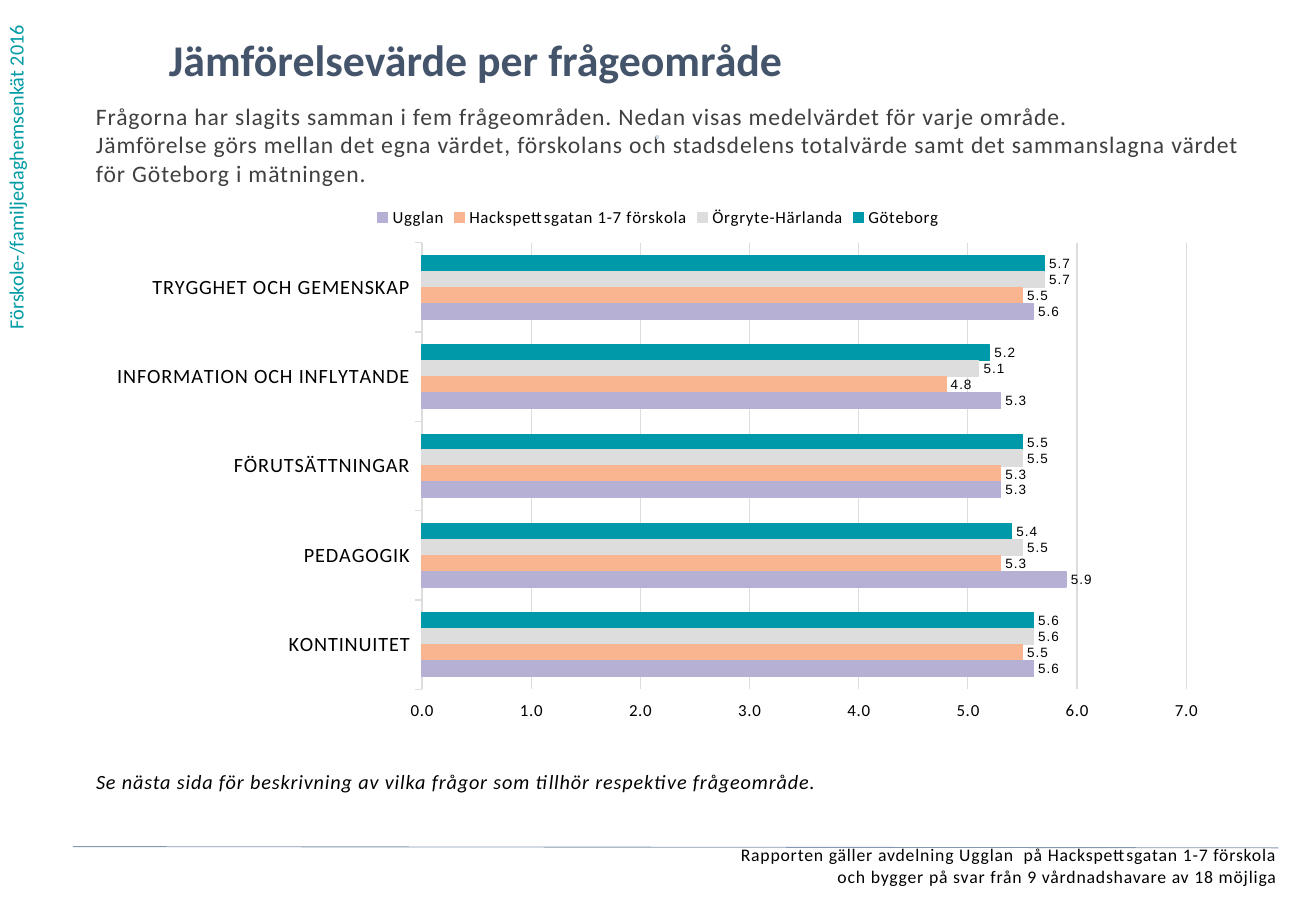
from pptx import Presentation
from pptx import util as u
from pptx.chart.data import CategoryChartData
from pptx.dml.color import RGBColor
from pptx.enum import chart as charts, shapes, text as texts
from pptx.oxml import parse_xml
from pptx.oxml.ns import nsdecls, qn

CATEGORIES = [
    "TRYGGHET OCH GEMENSKAP",
    "INFORMATION OCH INFLYTANDE",
    "FÖRUTSÄTTNINGAR",
    "PEDAGOGIK",
    "KONTINUITET",
]
SERIES = [
    ("Göteborg", "0099AA", [5.7, 5.2, 5.5, 5.4, 5.6]),
    ("Örgryte-Härlanda", "DDDDDD", [5.7, 5.1, 5.5, 5.5, 5.6]),
    ("Hackspettsgatan 1-7 förskola", "F9B590", [5.5, 4.8, 5.3, 5.3, 5.5]),
    ("Ugglan", "B6B1D4", [5.6, 5.3, 5.3, 5.9, 5.6]),
]
PLOT_AREA = {"x": 0.29, "y": 0.09, "w": 0.68, "h": 0.83}


def px(value):
    return u.Emu(value * 9144)


def color(value):
    return RGBColor.from_string(value)


class SlideBuilder:
    font_name = "Calibri"
    label_font = "Arial"
    black = "000000"
    grid = "DDDDDD"
    number_format = "0.0;0.0"
    letter_spacing = "50"

    def __init__(self, slide):
        self.slide = slide

    def style(self, font, size, fill=black, name=font_name, bold=False, italic=False):
        font.size = u.Pt(size)
        font.name = name
        font.bold = bold
        font.italic = italic
        font.color.rgb = color(fill)

    def outline(self, line, fill, width=0.75):
        line.color.rgb = color(fill)
        line.width = u.Pt(width)

    def text(self, content, box, align=texts.PP_ALIGN.LEFT, inset=True, spaced=True,
             vertical=False, **font_format):
        shape = self.slide.shapes.add_textbox(*map(px, box))
        frame = shape.text_frame
        frame.word_wrap = True
        if inset:
            frame.margin_left = frame.margin_right = 0
            frame.margin_top = frame.margin_bottom = 0
        if vertical:
            frame._txBody.bodyPr.set("vert", "vert270")
        frame.text = content
        for paragraph in frame.paragraphs:
            paragraph.alignment = align
            for run in paragraph.runs:
                self.style(run.font, **font_format)
                if spaced:
                    run._r.get_or_add_rPr().set("spc", self.letter_spacing)

    def line(self, start, end, fill, width):
        connector = self.slide.shapes.add_connector(
            shapes.MSO_CONNECTOR.STRAIGHT, *map(px, start + end))
        self.outline(connector.line, fill, width)
        connector._element.spPr.append(parse_xml(f"<a:effectLst {nsdecls('a')}/>"))

    def bar_chart(self, box, categories, series_rows, plot_area):
        data = CategoryChartData(number_format=self.number_format)
        data.categories = categories
        for name, _, values in series_rows:
            data.add_series(name, values)
        chart = self.slide.shapes.add_chart(
            charts.XL_CHART_TYPE.BAR_CLUSTERED, *map(px, box), data).chart
        self.style(chart.font, 10)
        chart.has_title = False
        chart.has_legend = True
        chart.legend.position = charts.XL_LEGEND_POSITION.TOP
        chart.legend.include_in_layout = False
        self.style(chart.legend.font, 10)

        plot = chart.plots[0]
        plot.gap_width = 162
        plot.overlap = 0
        plot.vary_by_categories = False
        for series, (_, fill, _) in zip(plot.series, series_rows):
            self.format_series(series, fill)
        self.format_axes(chart)
        self.place_plot(chart, plot_area)
        for properties in chart.element.iter(qn("a:defRPr")):
            properties.set("spc", self.letter_spacing)

    def format_series(self, series, fill):
        series.invert_if_negative = False
        series.format.fill.solid()
        series.format.fill.fore_color.rgb = color(fill)
        self.outline(series.format.line, fill)
        labels = series.data_labels
        labels.show_value = True
        labels.number_format = self.number_format
        labels.number_format_is_linked = False
        labels.position = charts.XL_LABEL_POSITION.OUTSIDE_END
        self.style(labels.font, 8, name=self.label_font)

    def format_axes(self, chart):
        category_axis = chart.category_axis
        category_axis.reverse_order = True
        category_axis.has_major_gridlines = False
        self.outline(category_axis.format.line, self.grid)
        self.style(category_axis.tick_labels.font, 12)

        value_axis = chart.value_axis
        value_axis.minimum_scale = 0
        value_axis.maximum_scale = 7
        value_axis.major_unit = 1
        value_axis.has_major_gridlines = True
        value_axis.tick_label_position = charts.XL_TICK_LABEL_POSITION.HIGH
        self.outline(value_axis.major_gridlines.format.line, self.grid)
        value_axis.format.line.fill.background()
        value_axis.tick_labels.number_format = self.number_format
        value_axis.tick_labels.number_format_is_linked = False
        self.style(value_axis.tick_labels.font, 10)
        for axis in (category_axis, value_axis):
            axis.major_tick_mark = charts.XL_TICK_MARK.OUTSIDE

    def place_plot(self, chart, plot_area):
        area = chart.element.find(".//" + qn("c:plotArea"))
        for layout in area.findall(qn("c:layout")):
            area.remove(layout)
        modes = "".join(f'<c:{side}Mode val="edge"/>' for side in "xy")
        sizes = "".join(f'<c:{key} val="{value}"/>' for key, value in plot_area.items())
        area.insert(0, parse_xml(
            f"<c:layout {nsdecls('c')}><c:manualLayout>"
            f'<c:layoutTarget val="inner"/>{modes}{sizes}'
            "</c:manualLayout></c:layout>"))


def main():
    presentation = Presentation()
    presentation.slide_width = px(1083)
    presentation.slide_height = px(750)
    builder = SlideBuilder(presentation.slides.add_slide(presentation.slide_layouts[6]))

    builder.text("Förskole-/familjedaghemsenkät 2016", (-2, 0, 40, 281),
                 inset=False, spaced=False, vertical=True, size=12, fill="009BA4")
    builder.text("Jämförelsevärde per frågeområde", (139, 27, 834, 57),
                 spaced=False, size=26, fill="44546A", bold=True)
    builder.text(
        "Frågorna har slagits samman i fem frågeområden. "
        "Nedan visas medelvärdet för varje område.\n"
        "Jämförelse görs mellan det egna värdet, förskolans och stadsdelens totalvärde "
        "samt det sammanslagna värdet för Göteborg i mätningen.",
        (79, 84, 946, 76), size=14, fill="404040")
    builder.text(
        "Rapporten gäller avdelning Ugglan  på Hackspettsgatan 1-7 förskola\n"
        "och bygger på svar från 9 vårdnadshavare av 18 möjliga",
        (12, 695, 1039, 43), align=texts.PP_ALIGN.RIGHT, size=10.5)
    builder.text("⋅", (387, 102, 308, 39), align=texts.PP_ALIGN.CENTER,
                 size=12, fill="D2D9E2", bold=True)
    builder.text(
        "Se nästa sida för beskrivning av vilka frågor som tillhör respektive frågeområde.",
        (79, 633, 925, 40), size=12, italic=True)
    builder.bar_chart((79, 160, 925, 443), CATEGORIES, SERIES, PLOT_AREA)
    builder.line((60, 697), (1052, 698), "8497B0", 0.5)

    presentation.save("out.pptx")


if __name__ == "__main__":
    main()
